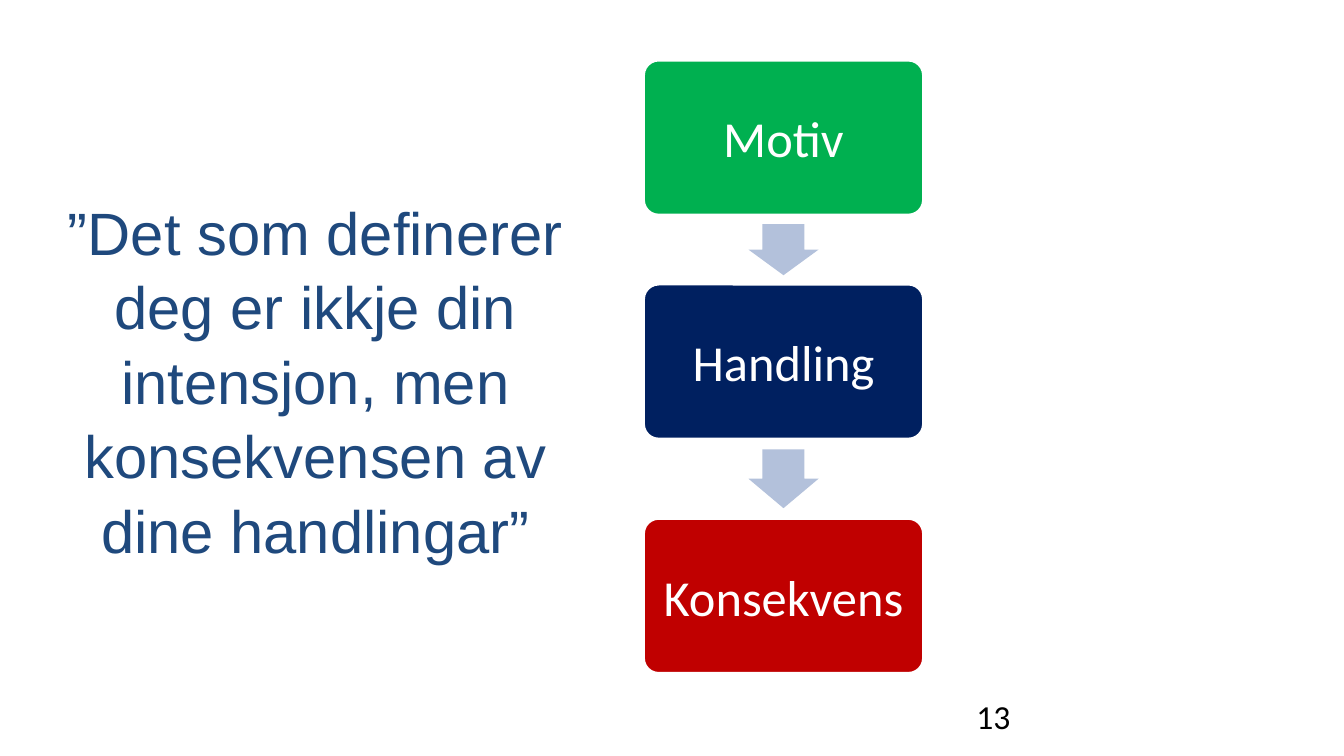
from dataclasses import dataclass

import pptx
import pptx.dml.color
import pptx.enum.shapes
import pptx.enum.text
import pptx.util

Pt = pptx.util.Pt
RGBColor = pptx.dml.color.RGBColor
Shape = pptx.enum.shapes.MSO_SHAPE
Align = pptx.enum.text.PP_ALIGN
Anchor = pptx.enum.text.MSO_ANCHOR
AutoSize = pptx.enum.text.MSO_AUTO_SIZE


@dataclass(frozen=True)
class Theme:
    """Colours, fonts and type sizes of the slide."""
    quote: str = "1F497D"
    motive: str = "00B050"
    action: str = "002060"
    consequence: str = "C00000"
    arrow: str = "B3C1DB"
    light: str = "FFFFFF"
    dark: str = "000000"
    quote_font: str = "Arial"
    body_font: str = "Calibri"
    quote_size: int = 32
    step_size: int = 27
    number_size: int = 18


THEME = Theme()


@dataclass(frozen=True)
class Box:
    """A rectangle in points."""
    left: float
    top: float
    width: float
    height: float

    def lengths(self):
        """Return left, top, width and height as lengths."""
        return Pt(self.left), Pt(self.top), Pt(self.width), Pt(self.height)


def set_text(frame, text, font, size, color, align, anchor):
    """Write one formatted paragraph into a text frame and return it."""
    frame.text = text
    frame.word_wrap = True
    frame.auto_size = AutoSize.NONE
    frame.vertical_anchor = anchor
    paragraph = frame.paragraphs[0]
    paragraph.alignment = align
    run_font = paragraph.runs[0].font
    run_font.name = font
    run_font.size = Pt(size)
    run_font.color.rgb = RGBColor.from_string(color)
    return paragraph


def add_filled(slide, kind, box, adjustments, color):
    """Add a flat preset shape without a line."""
    shape = slide.shapes.add_shape(kind, *box.lengths())
    for index, value in enumerate(adjustments):
        shape.adjustments[index] = value
    shape.shadow.inherit = False
    shape.fill.solid()
    shape.fill.fore_color.rgb = RGBColor.from_string(color)
    shape.line.fill.background()
    return shape


def add_quote(slide, box, text):
    """Place the quote in the title placeholder."""
    quote = slide.shapes.title
    quote.left, quote.top, quote.width, quote.height = box.lengths()
    paragraph = set_text(quote.text_frame, text, THEME.quote_font, THEME.quote_size,
                         THEME.quote, Align.CENTER, Anchor.MIDDLE)
    paragraph.line_spacing = 1.04


def add_step(slide, box, label, color):
    """Add one rounded step of the chain."""
    step = add_filled(slide, Shape.ROUNDED_RECTANGLE, box, [0.1], color)
    step.line.color.rgb = RGBColor.from_string(THEME.light)
    step.line.width = Pt(2)
    frame = step.text_frame
    frame.margin_left = frame.margin_right = Pt(7)
    set_text(frame, label, THEME.body_font, THEME.step_size, THEME.light,
             Align.CENTER, Anchor.MIDDLE)


def add_chain(slide, box, steps, gaps):
    """Stack the steps in the box, with an arrow in each gap."""
    step_height = (box.height - sum(gaps)) / len(steps)
    arrow_width, arrow_share = 37.5, 0.75
    top = box.top
    for index, (label, color) in enumerate(steps):
        add_step(slide, Box(box.left, top, box.width, step_height), label, color)
        top += step_height
        if index < len(gaps):
            gap = gaps[index]
            arrow = Box(box.left + (box.width - arrow_width) / 2,
                        top + gap * (1 - arrow_share) / 2, arrow_width, gap * arrow_share)
            add_filled(slide, Shape.DOWN_ARROW, arrow, [0.6, 0.5], THEME.arrow)
            top += gap


def add_page_number(slide, box, number):
    """Place the page number."""
    page_number = slide.shapes.add_textbox(*box.lengths())
    set_text(page_number.text_frame, number, THEME.body_font, THEME.number_size,
             THEME.dark, Align.LEFT, Anchor.TOP)


def main():
    """Build and save the slide."""
    presentation = pptx.Presentation()
    presentation.slide_width = Pt(720)
    presentation.slide_height = Pt(405)
    slide = presentation.slides.add_slide(presentation.slide_layouts[5])
    add_quote(slide, Box(20, 75, 298, 256),
              "”Det som definerer deg er ikkje din intensjon, men konsekvensen av dine handlingar”")
    steps = [("Motiv", THEME.motive), ("Handling", THEME.action),
             ("Konsekvens", THEME.consequence)]
    add_chain(slide, Box(344.5, 32, 150.5, 329), steps, gaps=[36.5, 42])
    add_page_number(slide, Box(516, 369, 150, 27), "13")
    presentation.save("out.pptx")


if __name__ == "__main__":
    main()
